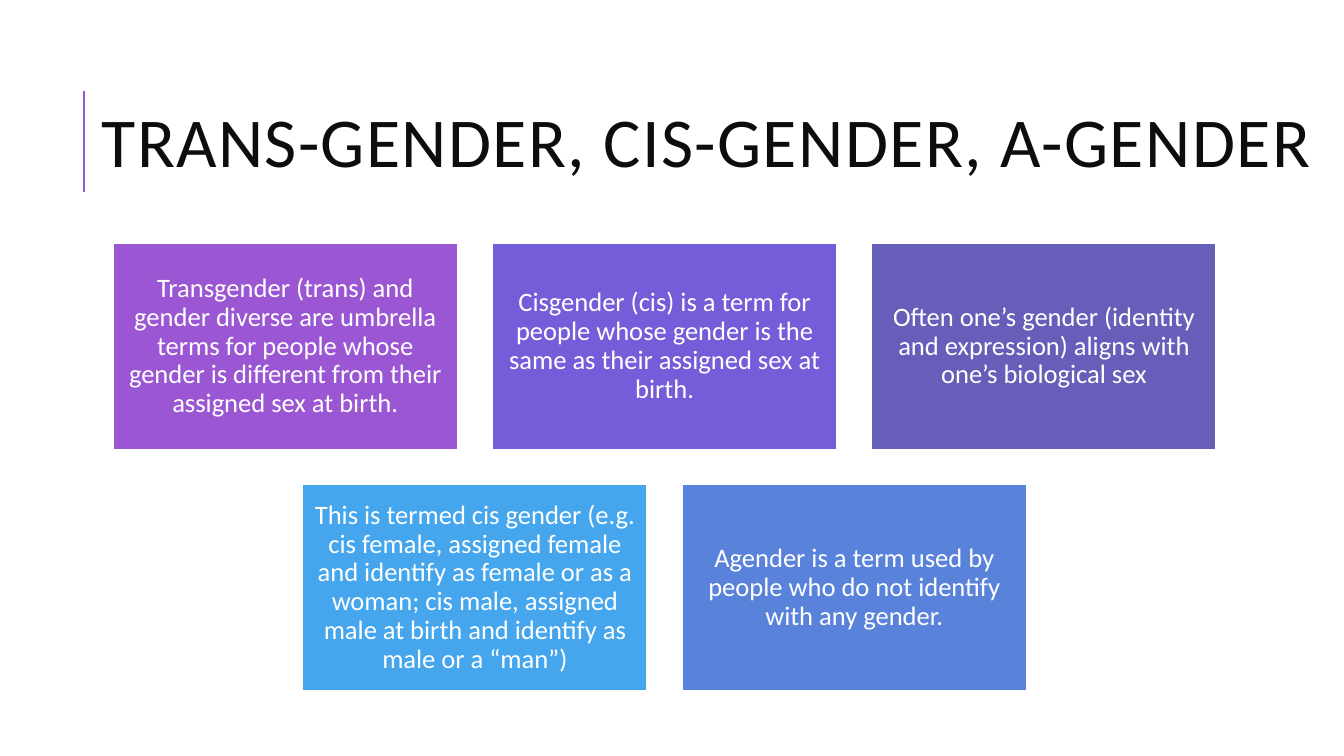
from dataclasses import dataclass

from lxml.etree import SubElement
from pptx import Presentation
from pptx.dml.color import RGBColor
from pptx.enum.shapes import MSO_CONNECTOR, MSO_SHAPE
from pptx.enum.text import MSO_ANCHOR, MSO_AUTO_SIZE, PP_ALIGN
from pptx.oxml.ns import qn
from pptx.slide import Slide
from pptx.text.text import TextFrame
from pptx.util import Cm, Pt

PURPLE = RGBColor(0x9B, 0x57, 0xD3)
VIOLET = RGBColor(0x75, 0x5D, 0xD9)
INDIGO = RGBColor(0x66, 0x5E, 0xB8)
SKY = RGBColor(0x45, 0xA5, 0xED)
BLUE = RGBColor(0x59, 0x82, 0xDB)
WHITE = RGBColor(0xFF, 0xFF, 0xFF)
INK = RGBColor(0x0D, 0x0D, 0x0D)

FONT = "Calibri"
CARD_WIDTH, CARD_HEIGHT = 8.69, 5.22
COLUMN_PITCH, ROW_PITCH = 9.56, 6.08
GRID_CENTER, GRID_TOP = 16.75, 6.12


@dataclass(frozen=True)
class Definition:
    text: str
    fill: RGBColor


DEFINITION_ROWS: list[list[Definition]] = [
    [
        Definition(
            "Transgender (trans) and gender diverse are umbrella terms for people "
            "whose gender is different from their assigned sex at birth.",
            PURPLE,
        ),
        Definition(
            "Cisgender (cis) is a term for people whose gender is the same as "
            "their assigned sex at birth.",
            VIOLET,
        ),
        Definition(
            "Often one’s gender (identity and expression) aligns with one’s "
            "biological sex",
            INDIGO,
        ),
    ],
    [
        Definition(
            "This is termed cis gender (e.g. cis female, assigned female and "
            "identify as female or as a woman; cis male, assigned male at birth "
            "and identify as male or a “man”)",
            SKY,
        ),
        Definition(
            "Agender is a term used by people who do not identify with any gender.",
            BLUE,
        ),
    ],
]


def write_text(
    frame: TextFrame, text: str, size: float, color: RGBColor,
    align: PP_ALIGN, line_spacing: float, tracking: int = 0,
) -> None:
    frame.word_wrap = True
    frame.auto_size = MSO_AUTO_SIZE.NONE
    frame.vertical_anchor = MSO_ANCHOR.MIDDLE
    paragraph = frame.paragraphs[0]
    paragraph.alignment = align
    paragraph.line_spacing = line_spacing
    run = paragraph.add_run()
    run.text = text
    run.font.name = FONT
    run.font.size = Pt(size)
    run.font.color.rgb = color
    if tracking:
        run.font._element.set("spc", str(tracking))


def draw_accent(slide: Slide) -> None:
    accent = slide.shapes.add_connector(
        MSO_CONNECTOR.STRAIGHT, Cm(2.11), Cm(4.83), Cm(2.11), Cm(2.29)
    )
    accent.line.color.rgb = PURPLE
    accent.line.width = Pt(1.5)
    SubElement(accent._element.spPr, qn("a:effectLst"))


def draw_title(slide: Slide) -> None:
    title = slide.shapes.title
    title.left, title.top = Cm(2.31), Cm(1.63)
    title.width, title.height = Cm(31.24), Cm(4.17)
    write_text(
        title.text_frame, "TRANS-GENDER, CIS-GENDER, A-GENDER", 50, INK,
        PP_ALIGN.LEFT, 0.8, tracking=100,
    )


def draw_definition(
    slide: Slide, definition: Definition, left: float, top: float
) -> None:
    card = slide.shapes.add_shape(
        MSO_SHAPE.RECTANGLE, Cm(left), Cm(top), Cm(CARD_WIDTH), Cm(CARD_HEIGHT)
    )
    card.shadow.inherit = False
    card.fill.solid()
    card.fill.fore_color.rgb = definition.fill
    card.line.color.rgb = WHITE
    card.line.width = Pt(1.25)
    frame = card.text_frame
    frame.margin_left = frame.margin_right = Cm(0.2)
    frame.margin_top = frame.margin_bottom = Cm(0.2)
    write_text(frame, definition.text, 19, WHITE, PP_ALIGN.CENTER, 0.9)


def main() -> None:
    presentation = Presentation()
    presentation.slide_width, presentation.slide_height = Cm(33.87), Cm(19.05)
    slide = presentation.slides.add_slide(presentation.slide_layouts[5])
    draw_accent(slide)
    draw_title(slide)
    for row, definitions in enumerate(DEFINITION_ROWS):
        row_width = (len(definitions) - 1) * COLUMN_PITCH + CARD_WIDTH
        row_left = GRID_CENTER - row_width / 2
        for column, definition in enumerate(definitions):
            draw_definition(
                slide, definition,
                row_left + column * COLUMN_PITCH, GRID_TOP + row * ROW_PITCH,
            )
    presentation.save("out.pptx")


if __name__ == "__main__":
    main()
